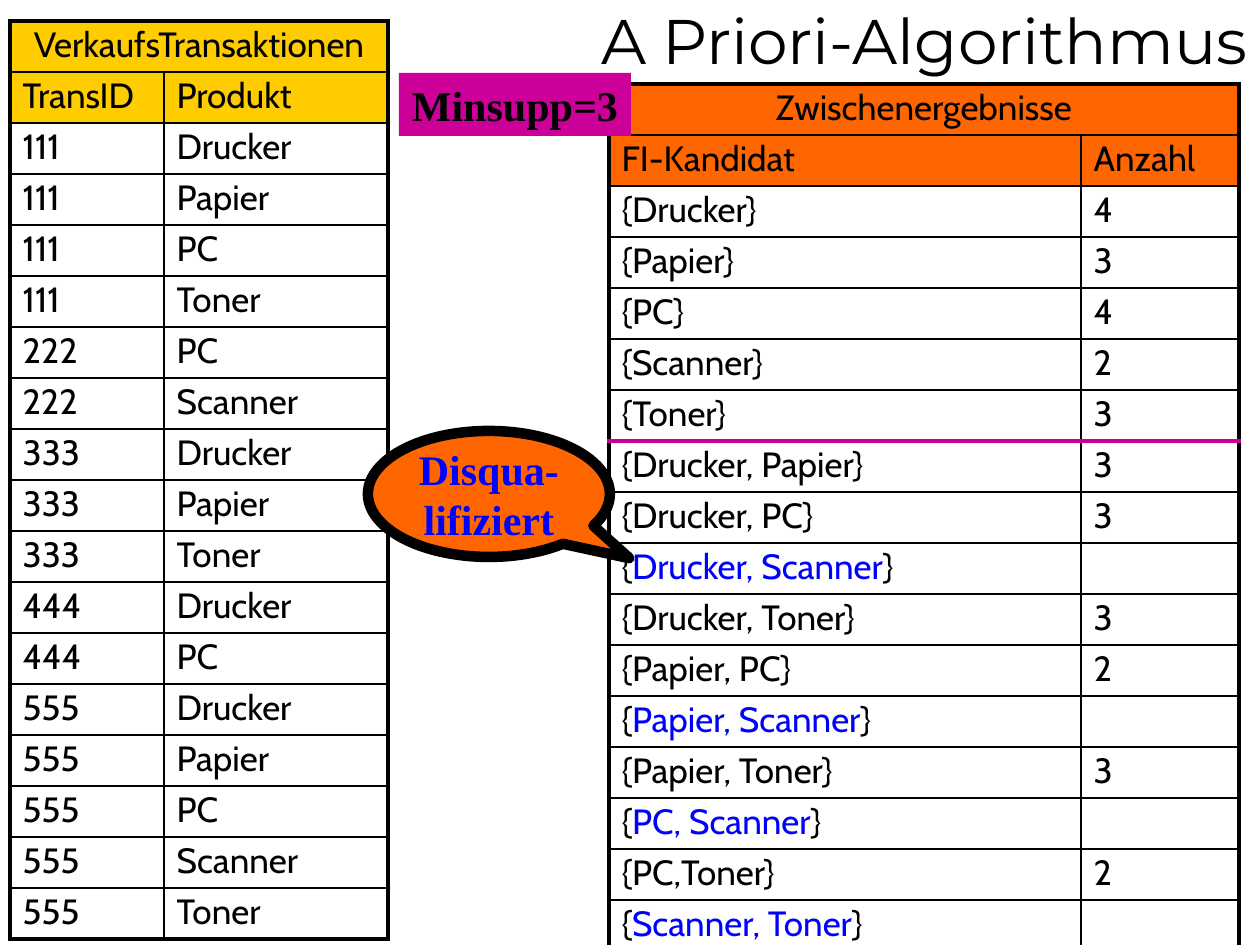
from dataclasses import dataclass

from lxml import etree
from pptx import Presentation
from pptx import util as u
from pptx.dml import color
from pptx.enum import shapes, text
from pptx.oxml import ns

SCALE = 914400 // 126
ROW = 51
BLACK, BLUE, ORANGE, PINK, GOLD = "000000", "0000FF", "FF6600", "CC0099", "FFCC00"
LEFT, MID, RIGHT = text.PP_ALIGN.LEFT, text.PP_ALIGN.CENTER, text.PP_ALIGN.RIGHT


@dataclass
class Grid:
    x: int
    y: int
    cols: tuple
    fill: str
    rows: list
    rule: int = 0


@dataclass
class Box:
    kind: int
    x: int
    y: int
    w: int
    h: int
    fill: str
    label: str
    ink: str
    line: float = 0
    adj: tuple = ()
    wrap: bool = False


def px(n: int) -> int:
    return u.Emu(n * SCALE)


def rgb(code: str) -> color.RGBColor:
    return color.RGBColor.from_string(code)


def put(frame, words: str, *, font="Cabin", size=20, ink=BLACK, inner=None,
        bold=False, align=LEFT, space=None) -> None:
    par = frame.paragraphs[0]
    par.alignment = align
    par.line_spacing = space
    parts = [(words, ink)]
    if inner:
        parts = [(words[0], ink), (words[1:-1], inner), (words[-1], ink)]
    for part, tint in parts:
        run = par.add_run()
        run.text = part
        run.font.name, run.font.size, run.font.bold = font, u.Pt(size), bold
        run.font.color.rgb = rgb(tint)


def edge(cell, side: str, width: float, tint: str) -> None:
    line = etree.SubElement(cell._tc.get_or_add_tcPr(), ns.qn("a:ln" + side),
                            w=str(u.Pt(width)))
    fill = etree.SubElement(line, ns.qn("a:solidFill"))
    etree.SubElement(fill, ns.qn("a:srgbClr"), val=tint)


def draw_grid(slide, grid: Grid) -> None:
    count, wide = len(grid.rows), len(grid.cols)
    table = slide.shapes.add_table(count, wide, px(grid.x), px(grid.y),
                                   px(sum(grid.cols)), px(ROW * count)).table
    table.first_row = table.horz_banding = False
    for col, width in zip(table.columns, grid.cols):
        col.width = px(width)
    table.cell(0, 0).merge(table.cell(0, wide - 1))
    for i, row in enumerate(grid.rows):
        table.rows[i].height = px(ROW)
        for j in range(wide):
            cell = table.cell(i, j)
            outer = {"L": j == 0, "R": j == wide - 1 or i == 0,
                     "T": i == 0, "B": i == count - 1}
            for side, thick in outer.items():
                mark = grid.rule and (side, i) in (("B", grid.rule - 1), ("T", grid.rule))
                edge(cell, side, 3 if mark else 2.25 if thick else 1,
                     PINK if mark else BLACK)
            if i < 2:
                cell.fill.solid()
                cell.fill.fore_color.rgb = rgb(grid.fill)
            else:
                cell.fill.background()
            if j < len(row) and row[j]:
                out = "Scanner" in row[j] and "," in row[j]
                put(cell.text_frame, row[j], inner=BLUE if out else None,
                    align=LEFT if i else MID, space=0.9)


def draw_box(slide, box: Box) -> None:
    shape = slide.shapes.add_shape(box.kind, px(box.x), px(box.y), px(box.w), px(box.h))
    shape.shadow.inherit = False
    shape.fill.solid()
    shape.fill.fore_color.rgb = rgb(box.fill)
    if box.line:
        shape.line.width = u.Pt(box.line)
        shape.line.color.rgb = rgb(BLACK)
    else:
        shape.line.fill.background()
    for i, val in enumerate(box.adj):
        shape.adjustments[i] = val
    frame = shape.text_frame
    frame.word_wrap = box.wrap
    frame.vertical_anchor = text.MSO_ANCHOR.MIDDLE
    frame.margin_left = frame.margin_right = 0
    put(frame, box.label, font="Times New Roman", size=24, ink=box.ink, bold=True, align=MID)


def draw_title(slide, words: str) -> None:
    frame = slide.shapes.add_textbox(0, px(2), px(1260), px(77)).text_frame
    frame.word_wrap = True
    frame.margin_top = frame.margin_bottom = 0
    put(frame, words, font="Montserrat", size=36, align=RIGHT)


SALES = {
    "111": "Drucker Papier PC Toner",
    "222": "PC Scanner",
    "333": "Drucker Papier Toner",
    "444": "Drucker PC",
    "555": "Drucker Papier PC Scanner Toner",
}
SOLD = [("VerkaufsTransaktionen",), ("TransID", "Produkt")]
SOLD += [(key, item) for key, items in SALES.items() for item in items.split()]
FOUND = [
    ("Zwischenergebnisse",), ("FI-Kandidat", "Anzahl"),
    ("{Drucker}", "4"), ("{Papier}", "3"), ("{PC}", "4"),
    ("{Scanner}", "2"), ("{Toner}", "3"),
    ("{Drucker, Papier}", "3"), ("{Drucker, PC}", "3"), ("{Drucker, Scanner}",),
    ("{Drucker, Toner}", "3"), ("{Papier, PC}", "2"), ("{Papier, Scanner}",),
    ("{Papier, Toner}", "3"), ("{PC, Scanner}",), ("{PC,Toner}", "2"),
    ("{Scanner, Toner}",),
]
GRIDS = [
    Grid(10, 21, (154, 224), GOLD, SOLD),
    Grid(609, 84, (472, 158), ORANGE, FOUND, rule=7),
]
KIND = shapes.MSO_SHAPE
BOXES = [
    Box(KIND.OVAL_CALLOUT, 368, 431, 242, 126, ORANGE, "Disqua-lifiziert", BLUE,
        line=6, adj=(0.58, 0.51), wrap=True),
    Box(KIND.RECTANGLE, 399, 73, 232, 63, PINK, "Minsupp=3", BLACK),
]


def main() -> None:
    deck = Presentation()
    deck.slide_width, deck.slide_height = px(1260), px(945)
    slide = deck.slides.add_slide(deck.slide_layouts[6])
    draw_title(slide, "A Priori-Algorithmus")
    for grid in GRIDS:
        draw_grid(slide, grid)
    for box in BOXES:
        draw_box(slide, box)
    deck.save("out.pptx")


if __name__ == "__main__":
    main()
